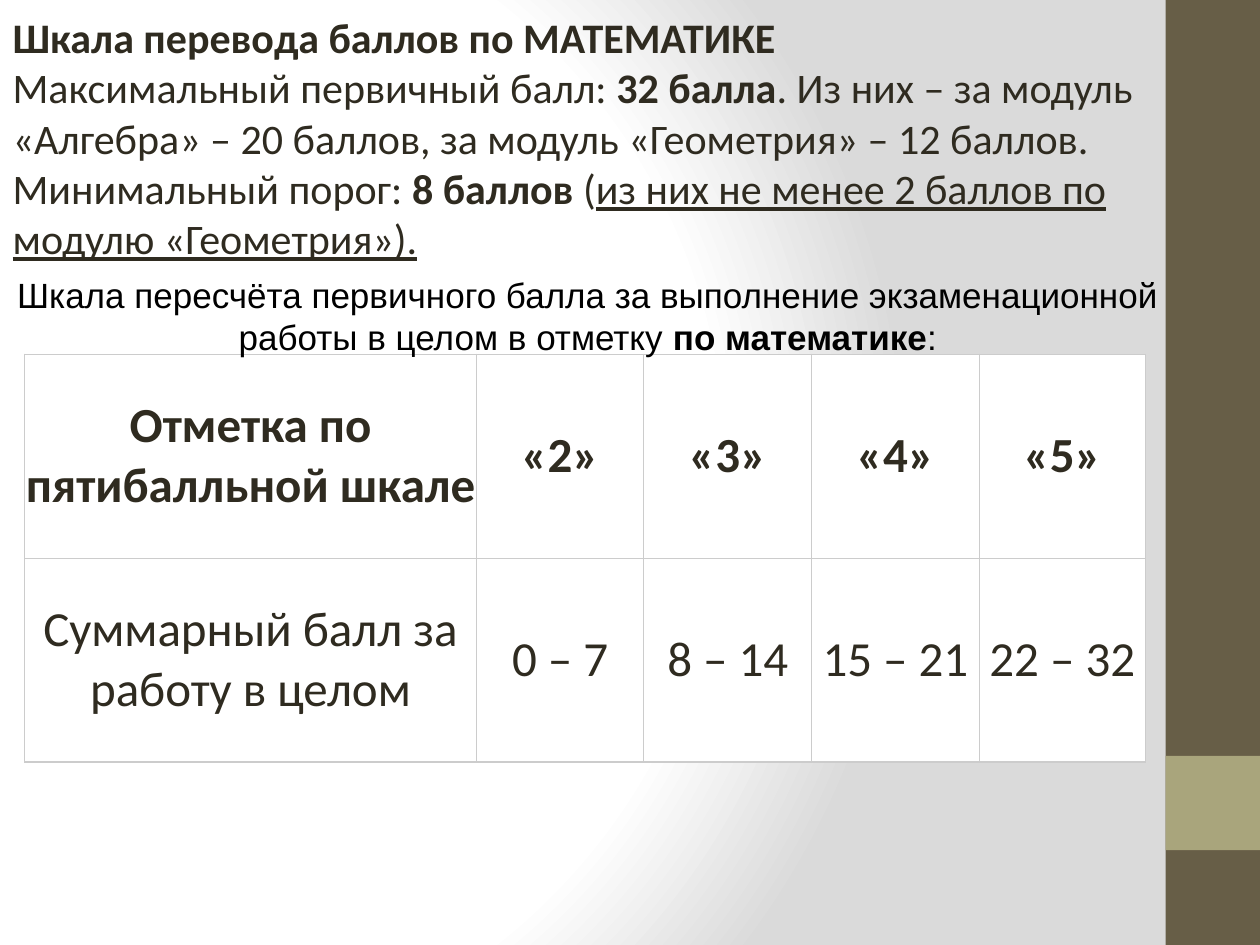
"""Build the slide with the score conversion scale for mathematics."""
from dataclasses import dataclass

from pptx import Presentation
from pptx.dml.color import RGBColor
from pptx.enum.shapes import MSO_SHAPE as Shape
from pptx.enum.text import MSO_ANCHOR as Anchor, MSO_AUTO_SIZE as AutoSize, PP_ALIGN as Align
from pptx.oxml import parse_xml
from pptx.oxml.ns import nsdecls, qn
from pptx.util import Cm, Pt


@dataclass(frozen=True)
class Theme:
    ink: str = "2F2B20"
    black: str = "000000"
    white: str = "FFFFFF"
    grey: str = "DADADA"
    border: str = "CCCCCC"
    sidebar: str = "675E47"
    accent: str = "A9A57C"
    main_font: str = "Calibri"
    caption_font: str = "Arial"
    intro_size: int = 24
    caption_size: int = 20
    table_size: int = 28


THEME = Theme()
INTRO = [
    [("Шкала перевода баллов по МАТЕМАТИКЕ", "b")],
    [("Максимальный первичный балл: ", ""), ("32 балла", "b"),
     (". Из них – за модуль «Алгебра» – 20 баллов, за модуль «Геометрия» – 12 баллов.", "")],
    [("Минимальный порог: ", ""), ("8 баллов", "b"), (" (", ""),
     ("из них не менее 2 баллов по модулю «Геометрия»).", "u")],
]
CAPTION = [
    [("Шкала пересчёта первичного балла за выполнение экзаменационной "
      "работы в целом в отметку ", ""), ("по математике", "b"), (":", "")],
]
SCALE = [
    ["Отметка по пятибалльной шкале", "«2»", "«3»", "«4»", "«5»"],
    ["Суммарный балл за работу в целом", "0 – 7", "8 – 14", "15 – 21", "22 – 32"],
]
COLUMN_WIDTHS = [9.1, 3.38, 3.38, 3.38, 3.35]
ROW_HEIGHT = 4.11


def style_font(font, name, size, color, marks=""):
    font.name, font.size = name, Pt(size)
    font.bold, font.underline = "b" in marks, "u" in marks
    font.color.rgb = RGBColor.from_string(color)


def paint_background(slide):
    slide.background.fill.solid()
    stops = "".join(
        f'<a:gs pos="{percent * 1000}"><a:srgbClr val="{color}"/></a:gs>'
        for percent, color in [(0, THEME.white), (75, THEME.white), (100, THEME.grey)])
    gradient = parse_xml(
        f'<a:gradFill {nsdecls("a")} rotWithShape="1"><a:gsLst>{stops}</a:gsLst>'
        '<a:path path="circle"><a:fillToRect l="20000" t="50000" r="100000" b="50000"/>'
        '</a:path></a:gradFill>')
    properties = slide.element.find(".//" + qn("p:bgPr"))
    properties.replace(properties[0], gradient)


def add_band(slide, top, height, color):
    band = slide.shapes.add_shape(Shape.RECTANGLE, Cm(23.5), Cm(top), Cm(1.9), Cm(height))
    band.shadow.inherit = False
    band.fill.solid()
    band.fill.fore_color.rgb = RGBColor.from_string(color)
    band.line.fill.background()


def write_paragraphs(frame, paragraphs, align, anchor, font, size, color):
    frame.word_wrap = True
    frame.auto_size = AutoSize.SHAPE_TO_FIT_TEXT
    frame.vertical_anchor = anchor
    for index, parts in enumerate(paragraphs):
        paragraph = frame.add_paragraph() if index else frame.paragraphs[0]
        paragraph.alignment = align
        for text, marks in parts:
            run = paragraph.add_run()
            run.text = text
            style_font(run.font, font, size, color, marks)


def add_intro(slide):
    title = slide.shapes.title
    title.left, title.top, title.width, title.height = Cm(0), Cm(0.1), Cm(23.6), Cm(5.38)
    write_paragraphs(title.text_frame, INTRO, Align.LEFT, Anchor.TOP,
                     THEME.main_font, THEME.intro_size, THEME.ink)


def add_caption(slide):
    caption = slide.shapes.add_textbox(Cm(0.05), Cm(5.38), Cm(23.6), Cm(1.96))
    write_paragraphs(caption.text_frame, CAPTION, Align.CENTER, Anchor.MIDDLE,
                     THEME.caption_font, THEME.caption_size, THEME.black)


def draw_borders(cell):
    properties = cell._tc.get_or_add_tcPr()
    for position, side in enumerate(["lnL", "lnR", "lnT", "lnB"]):
        properties.insert(position, parse_xml(
            f'<a:{side} {nsdecls("a")} w="{Pt(0.75)}"><a:solidFill>'
            f'<a:srgbClr val="{THEME.border}"/></a:solidFill></a:{side}>'))


def fill_cell(cell, text, marks):
    cell.text_frame.text = text
    cell.vertical_anchor = Anchor.MIDDLE
    cell.margin_left = cell.margin_right = cell.margin_top = cell.margin_bottom = 0
    cell.fill.solid()
    cell.fill.fore_color.rgb = RGBColor.from_string(THEME.white)
    paragraph = cell.text_frame.paragraphs[0]
    paragraph.alignment = Align.CENTER
    style_font(paragraph.runs[0].font, THEME.main_font, THEME.table_size, THEME.ink, marks)
    draw_borders(cell)


def add_scale_table(slide):
    table = slide.shapes.add_table(
        len(SCALE), len(COLUMN_WIDTHS), Cm(0.5), Cm(7.14),
        Cm(sum(COLUMN_WIDTHS)), Cm(ROW_HEIGHT * len(SCALE))).table
    for column, width in zip(table.columns, COLUMN_WIDTHS):
        column.width = Cm(width)
    for row_index, texts in enumerate(SCALE):
        table.rows[row_index].height = Cm(ROW_HEIGHT)
        for column_index, text in enumerate(texts):
            fill_cell(table.cell(row_index, column_index), text, "" if row_index else "b")


def main():
    deck = Presentation()
    deck.slide_width, deck.slide_height = Cm(25.4), Cm(19.05)
    slide = deck.slides.add_slide(deck.slide_layouts[5])
    paint_background(slide)
    add_band(slide, 0, 19.05, THEME.sidebar)
    add_band(slide, 15.24, 1.9, THEME.accent)
    add_intro(slide)
    add_scale_table(slide)
    add_caption(slide)
    deck.save("out.pptx")


if __name__ == "__main__":
    main()
